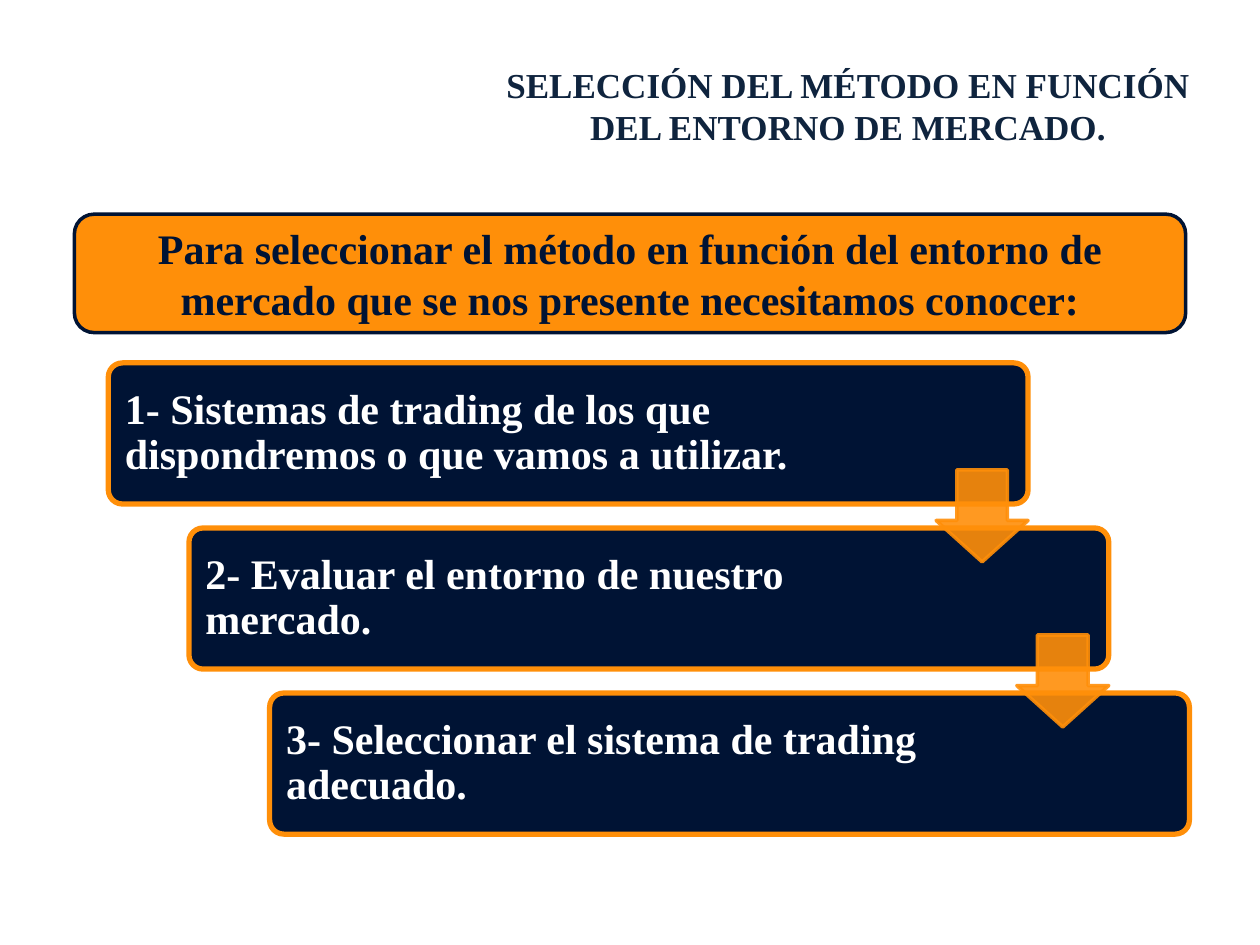
"""Build a slide with three descending steps for choosing a trading method."""
from dataclasses import dataclass

from lxml import etree
from pptx import Presentation
from pptx.dml.color import RGBColor
from pptx.enum.shapes import MSO_SHAPE
from pptx.enum.text import MSO_ANCHOR, PP_ALIGN
from pptx.oxml.ns import qn
from pptx.shapes.autoshape import Shape
from pptx.slide import Slide
from pptx.text.text import TextFrame
from pptx.util import Inches, Pt

ROUNDED = MSO_SHAPE.ROUNDED_RECTANGLE
DOWN_ARROW = MSO_SHAPE.DOWN_ARROW
MIDDLE = MSO_ANCHOR.MIDDLE
CENTER = PP_ALIGN.CENTER
LEFT = PP_ALIGN.LEFT

FONT = "Times New Roman"
COLORS = {
    "title": "0F243E",
    "navy": "001334",
    "orange": "FF8F09",
    "white": "FFFFFF",
}
STEPS = [
    "1- Sistemas de trading de los que dispondremos o que vamos a utilizar.",
    "2- Evaluar el entorno de nuestro mercado.",
    "3- Seleccionar el sistema de trading adecuado.",
]
STEP_LEFT, STEP_TOP = 0.86, 2.88
STEP_WIDTH, STEP_HEIGHT = 7.3, 1.12
SHIFT_X, SHIFT_Y = 0.64, 1.31
ARROW_SIZE = 0.73
ARROW_DROP = 0.85


@dataclass
class Box:
    """Position and size in inches."""

    left: float
    top: float
    width: float
    height: float

    def lengths(self) -> list[int]:
        """Return the four measures as slide lengths."""
        return [Inches(value) for value in (self.left, self.top, self.width, self.height)]


def color(name: str) -> RGBColor:
    """Look up a named colour."""
    return RGBColor.from_string(COLORS[name])


def write(text_frame: TextFrame, text: str, size: int, ink: str, alignment: PP_ALIGN) -> None:
    """Fill a text frame with one bold paragraph."""
    text_frame.text = text
    text_frame.word_wrap = True
    text_frame.vertical_anchor = MIDDLE
    paragraph = text_frame.paragraphs[0]
    paragraph.alignment = alignment
    font = paragraph.runs[0].font
    font.name, font.size, font.bold = FONT, Pt(size), True
    font.color.rgb = color(ink)


def add_block(slide: Slide, kind: MSO_SHAPE, box: Box, fill: str, line: str, weight: float) -> Shape:
    """Add a filled and outlined shape without shadow."""
    shape = slide.shapes.add_shape(kind, *box.lengths())
    shape.shadow.inherit = False
    shape.fill.solid()
    shape.fill.fore_color.rgb = color(fill)
    shape.line.color.rgb = color(line)
    shape.line.width = Pt(weight)
    return shape


def add_step(slide: Slide, index: int, text: str) -> None:
    """Add one step card, shifted right and down by its index."""
    box = Box(STEP_LEFT + index * SHIFT_X, STEP_TOP + index * SHIFT_Y, STEP_WIDTH, STEP_HEIGHT)
    card = add_block(slide, ROUNDED, box, "navy", "orange", 3)
    card.adjustments[0] = 0.1
    write(card.text_frame, text, 24, "white", LEFT)
    card.text_frame.margin_left = Inches(0.1)
    card.text_frame.margin_right = Inches(1.4)
    card.text_frame.paragraphs[0].line_spacing = 0.9


def add_arrow(slide: Slide, index: int) -> None:
    """Add the translucent arrow from one step to the next."""
    right = STEP_LEFT + index * SHIFT_X + STEP_WIDTH
    top = STEP_TOP + index * SHIFT_Y + ARROW_DROP
    box = Box(right - ARROW_SIZE, top, ARROW_SIZE, ARROW_SIZE)
    arrow = add_block(slide, DOWN_ARROW, box, "orange", "orange", 2)
    arrow.adjustments[0] = 0.55
    arrow.adjustments[1] = 0.45
    for element in arrow.element.spPr.iter(qn("a:srgbClr")):
        etree.SubElement(element, qn("a:alpha"), val="90000")


def main() -> None:
    """Create and save the presentation."""
    presentation = Presentation()
    presentation.slide_width, presentation.slide_height = Inches(10), Inches(7.5)
    slide = presentation.slides.add_slide(presentation.slide_layouts[5])

    title = slide.shapes.title
    title.left, title.top, title.width, title.height = Box(3.74, 0.21, 5.98, 1.25).lengths()
    write(title.text_frame, "SELECCIÓN DEL MÉTODO EN FUNCIÓN DEL ENTORNO DE MERCADO.", 20, "title", CENTER)

    for index, text in enumerate(STEPS):
        add_step(slide, index, text)
    for index in range(len(STEPS) - 1):
        add_arrow(slide, index)

    banner = add_block(slide, ROUNDED, Box(0.59, 1.7, 8.82, 0.94), "orange", "navy", 2)
    write(
        banner.text_frame,
        "Para seleccionar el método en función del entorno de mercado que se nos presente necesitamos conocer:",
        24,
        "navy",
        CENTER,
    )
    presentation.save("out.pptx")


if __name__ == "__main__":
    main()
